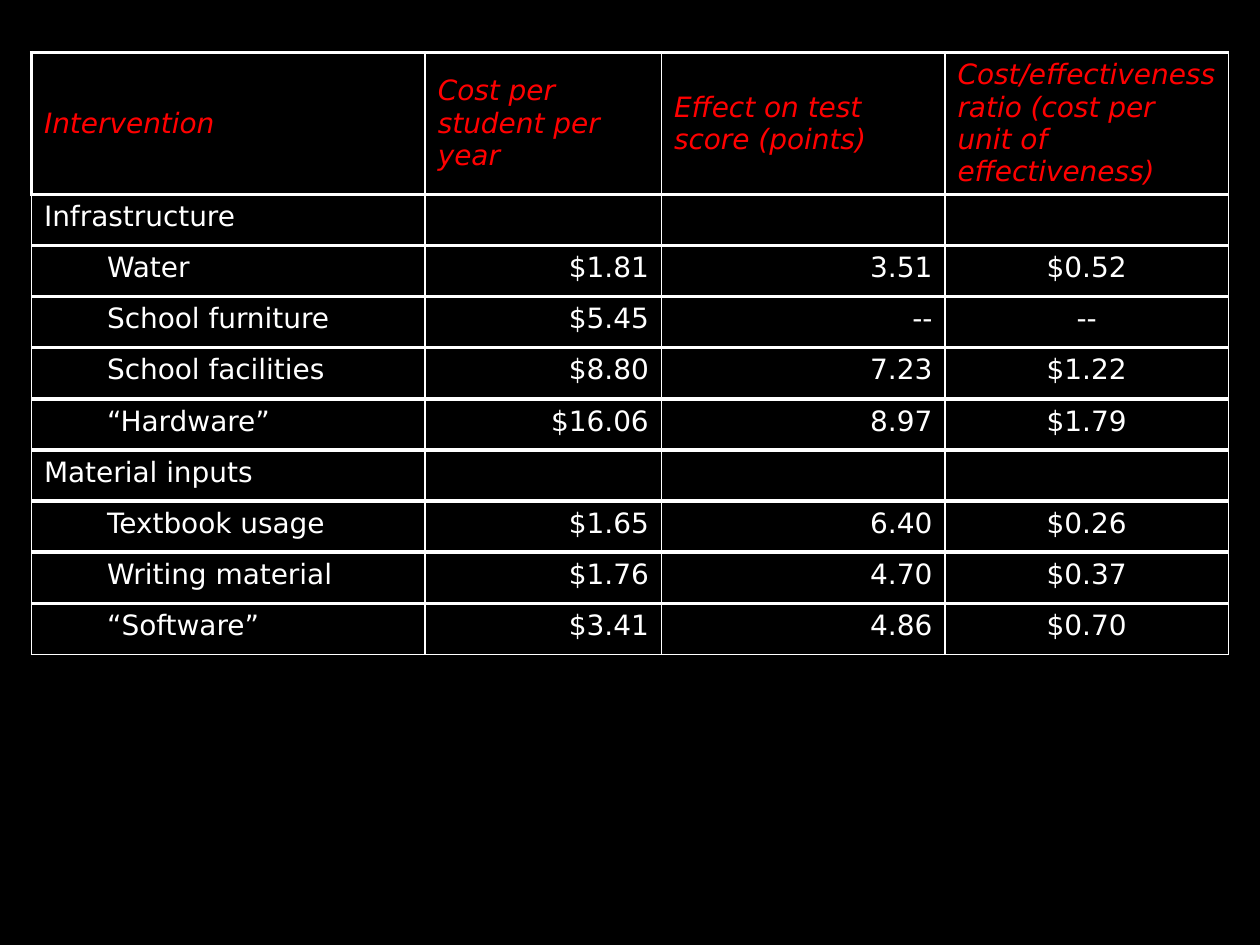
import pptx
import pptx.util
import pptx.dml.color
import pptx.enum.text
import pptx.oxml.ns
import dataclasses
import lxml.etree

Pt = pptx.util.Pt
RGB = pptx.dml.color.RGBColor
ALIGN = pptx.enum.text.PP_ALIGN
MIDDLE = pptx.enum.text.MSO_ANCHOR.MIDDLE
TOP = pptx.enum.text.MSO_ANCHOR.TOP


@dataclasses.dataclass(frozen=True)
class Theme:
    back: str = "000000"
    text: str = "FFFFFF"
    head: str = "FF0000"
    font: str = "DejaVu Sans"
    size: float = 16
    thin: float = 1
    thick: float = 2.25


THEME = Theme()
LEFT, UPPER = 18, 30
WIDTHS = [225, 135, 162, 162]
TALL, ROW = 81, 29.2
ALIGNS = [ALIGN.LEFT, ALIGN.RIGHT, ALIGN.RIGHT, ALIGN.CENTER]

HEADS = [
    "Intervention",
    "Cost per student per year",
    "Effect on test score (points)",
    "Cost/effectiveness ratio (cost per unit of effectiveness)",
]
GROUPS = {
    "Infrastructure": [
        ("Water", "$1.81", "3.51", "$0.52"),
        ("School furniture", "$5.45", "--", "--"),
        ("School facilities", "$8.80", "7.23", "$1.22"),
        ("“Hardware”", "$16.06", "8.97", "$1.79"),
    ],
    "Material inputs": [
        ("Textbook usage", "$1.65", "6.40", "$0.26"),
        ("Writing material", "$1.76", "4.70", "$0.37"),
        ("“Software”", "$3.41", "4.86", "$0.70"),
    ],
}


def add_edge(cell, side, width):
    qn = pptx.oxml.ns.qn
    props = cell._tc.get_or_add_tcPr()
    line = lxml.etree.SubElement(props, qn(f"a:ln{side}"), w=str(Pt(width)))
    fill = lxml.etree.SubElement(line, qn("a:solidFill"))
    lxml.etree.SubElement(fill, qn("a:srgbClr"), val=THEME.text)


def set_text(cell, text, color, align):
    cell.text = text
    para = cell.text_frame.paragraphs[0]
    para.alignment = align
    font = para.font
    font.name = THEME.font
    font.size = Pt(THEME.size)
    font.bold = False
    font.color.rgb = RGB.from_string(color)
    return para


def set_frame(cell, first, last, corner):
    edges = {
        "L": THEME.thick if corner else THEME.thin,
        "R": THEME.thin,
        "T": THEME.thick,
        "B": THEME.thin if last else THEME.thick,
    }
    for side, width in edges.items():
        add_edge(cell, side, width)
    cell.fill.background()
    cell.vertical_anchor = MIDDLE if first else TOP


def list_rows():
    rows = [HEADS]
    for group, items in GROUPS.items():
        rows.append((group, "", "", ""))
        rows.extend(items)
    return rows


def add_grid(slide, rows):
    last = len(rows) - 1
    high = TALL + ROW * last
    grid = slide.shapes.add_table(
        len(rows), len(WIDTHS), Pt(LEFT), Pt(UPPER), Pt(sum(WIDTHS)), Pt(high)
    ).table
    for col, width in zip(grid.columns, WIDTHS):
        col.width = Pt(width)
    for r, row in enumerate(rows):
        grid.rows[r].height = Pt(ROW if r else TALL)
        for c, text in enumerate(row):
            cell = grid.cell(r, c)
            set_frame(cell, r == 0, r == last, r == c == 0)
            if r == 0:
                para = set_text(cell, text, THEME.head, ALIGN.LEFT)
                para.font.italic = True
                continue
            para = set_text(cell, text, THEME.text, ALIGNS[c])
            if c == 0 and row[1]:
                para.level = 1
                props = para._p.get_or_add_pPr()
                props.set("marL", str(Pt(36)))
                props.set("indent", "0")


def main():
    deck = pptx.Presentation()
    deck.slide_width, deck.slide_height = Pt(720), Pt(540)
    slide = deck.slides.add_slide(deck.slide_layouts[6])
    back = slide.background.fill
    back.solid()
    back.fore_color.rgb = RGB.from_string(THEME.back)
    add_grid(slide, list_rows())
    deck.save("out.pptx")


if __name__ == "__main__":
    main()
